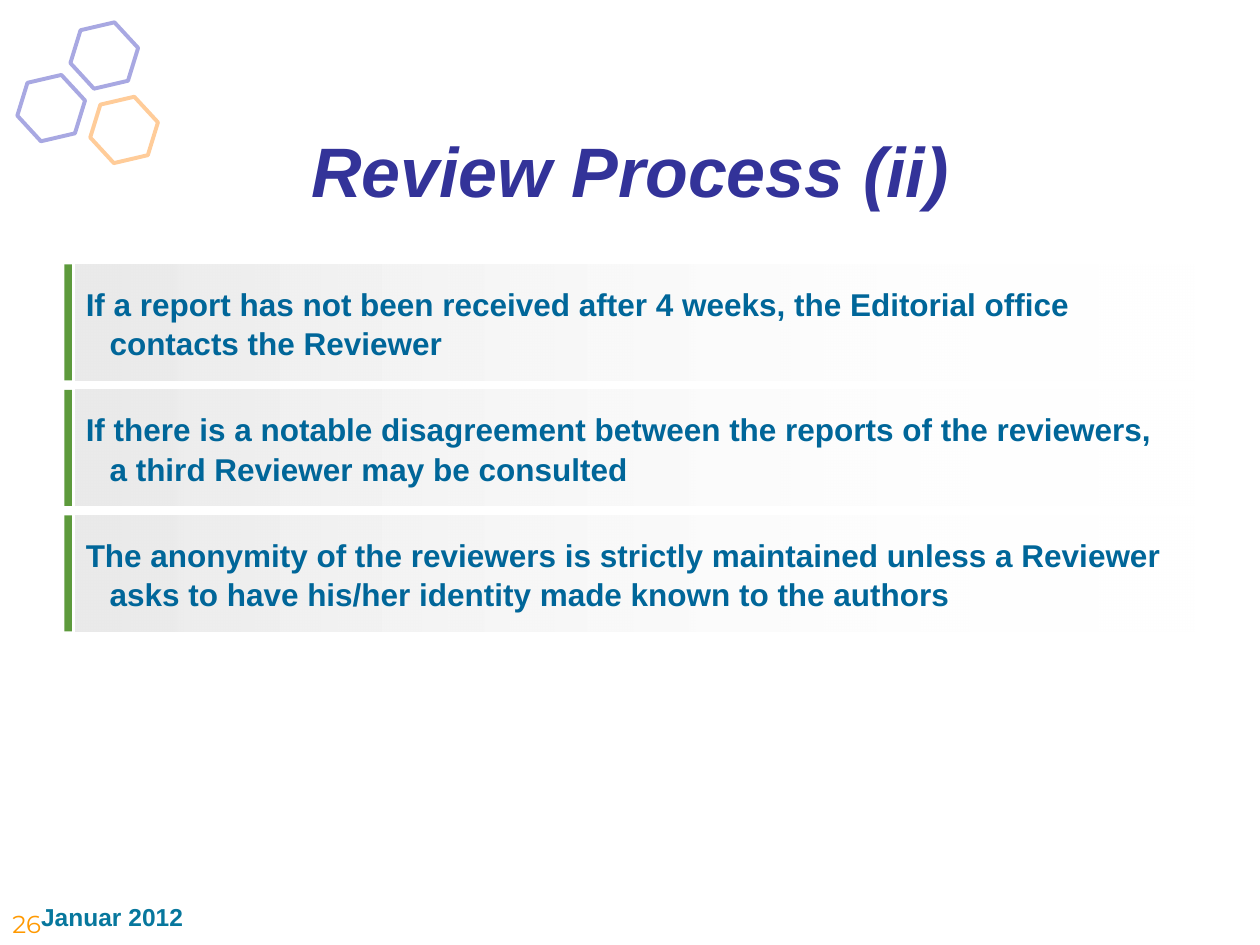
"""Build the Review Process (ii) slide."""
import pptx
import pptx.util
import pptx.dml.color
import pptx.enum.shapes
import pptx.enum.text
from dataclasses import dataclass
from lxml import etree
from pptx.util import Cm, Pt

SHAPE = pptx.enum.shapes.MSO_SHAPE
ANCHOR = pptx.enum.text.MSO_ANCHOR
ALIGN = pptx.enum.text.PP_ALIGN


@dataclass(frozen=True)
class Theme:
    font: str = "Arial"
    number_font: str = "Montserrat"
    title: str = "333399"
    body: str = "006699"
    date: str = "07779D"
    orange: str = "FF9900"
    lilac: str = "A8A8E2"
    peach: str = "FFCC99"
    bar: str = "5D9A3C"
    panel: str = "EAEAEA"
    white: str = "FFFFFF"
    title_size: int = 40
    body_size: int = 18
    footer_size: int = 14


THEME = Theme()
TITLE = "Review Process (ii)"
DATE = "Januar 2012"
PAGE = "26"
RULES = [
    "If a report has not been received after 4 weeks, the Editorial office contacts the Reviewer",
    "If there is a notable disagreement between the reports of the reviewers, a third Reviewer may be consulted",
    "The anonymity of the reviewers is strictly maintained unless a Reviewer asks to have his/her identity made known to the authors",
]
HEXAGONS = [(1.4, 0.51, THEME.lilac), (0.33, 1.57, THEME.lilac), (1.8, 2.01, THEME.peach)]
ROW_TOP, ROW_PITCH, ROW_HEIGHT, TEXT_HEIGHT = 5.33, 2.53, 2.34, 1.55


def rgb(value):
    return pptx.dml.color.RGBColor.from_string(value)


def add_shape(shapes, kind, box):
    sp = shapes.add_shape(kind, *map(Cm, box))
    sp.shadow.inherit = False
    sp.line.fill.background()
    return sp


def add_text(shapes, box, text, color, size, font=THEME.font, bold=True,
             italic=False, anchor=ANCHOR.TOP, margin=None, wrap=True):
    tf = shapes.add_textbox(*map(Cm, box)).text_frame
    tf.word_wrap = wrap
    tf.vertical_anchor = anchor
    if margin is not None:
        tf.margin_left = tf.margin_right = tf.margin_top = tf.margin_bottom = Cm(margin)
    p = tf.paragraphs[0]
    p.text = text
    p.font.name, p.font.size = font, Pt(size)
    p.font.bold, p.font.italic = bold, italic
    p.font.color.rgb = rgb(color)
    return p


def add_hexagon(shapes, left, top, color):
    sp = add_shape(shapes, SHAPE.HEXAGON, (left, top, 1.4, 1.22))
    sp.adjustments[0], sp.adjustments[1] = 0.29, 1.15
    sp.rotation = 107.1
    sp.fill.background()
    sp.line.color.rgb = rgb(color)
    sp.line.width = Pt(2.25)


def fade_right(sp):
    sp.fill.gradient()
    sp.fill.gradient_angle = 0
    for stop, color in zip(sp.fill.gradient_stops, (THEME.panel, THEME.white)):
        stop.color.rgb = rgb(color)
    last = list(sp._element.iter(pptx.oxml.ns.qn("a:srgbClr")))[-1]
    etree.SubElement(last, pptx.oxml.ns.qn("a:alpha"), val="0")


def add_rule(shapes, top, text):
    row = shapes.add_group_shape().shapes
    bar = add_shape(row, SHAPE.RECTANGLE, (1.3, top, 0.15, ROW_HEIGHT))
    bar.fill.solid()
    bar.fill.fore_color.rgb = rgb(THEME.bar)
    fade_right(add_shape(row, SHAPE.RECTANGLE, (1.52, top, 22.68, ROW_HEIGHT)))
    text_top = top + (ROW_HEIGHT - TEXT_HEIGHT) / 2
    p = add_text(row, (1.73, text_top, 21.72, TEXT_HEIGHT), text, THEME.body,
                 THEME.body_size, anchor=ANCHOR.MIDDLE, margin=0)
    p.line_spacing = 1.05
    pPr = p._p.get_or_add_pPr()
    pPr.set("marL", str(Cm(0.48)))
    pPr.set("indent", str(Cm(-0.48)))


def main():
    prs = pptx.Presentation()
    prs.slide_width, prs.slide_height = Cm(25.4), Cm(19.05)
    s = prs.slides.add_slide(prs.slide_layouts[6])
    for hexagon in HEXAGONS:
        add_hexagon(s.shapes, *hexagon)
    p = add_text(s.shapes, (1.27, 2.31, 22.86, 2.21), TITLE, THEME.title,
                 THEME.title_size, italic=True, anchor=ANCHOR.MIDDLE)
    p.alignment = ALIGN.CENTER
    add_text(s.shapes, (0.58, 18.06, 3.38, 0.86), DATE, THEME.date,
             THEME.footer_size, wrap=False)
    add_text(s.shapes, (0, 18.21, 1.7, 0.84), PAGE, THEME.orange,
             THEME.footer_size, font=THEME.number_font, bold=False)
    for i, text in enumerate(RULES):
        add_rule(s.shapes, ROW_TOP + i * ROW_PITCH, text)
    prs.save("out.pptx")


if __name__ == "__main__":
    main()
